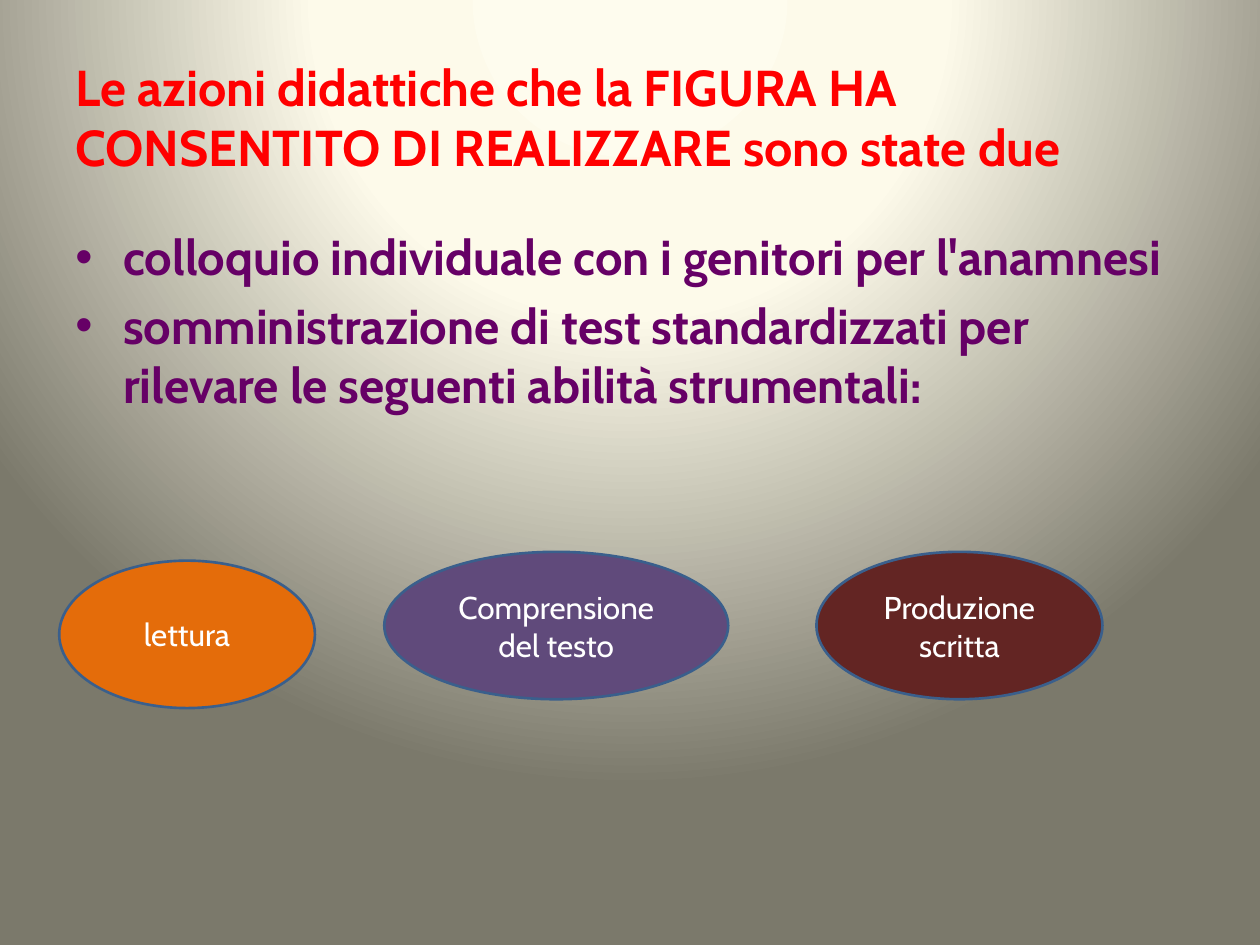
import dataclasses

import lxml.etree
import pptx
import pptx.dml.color
import pptx.enum.shapes
import pptx.enum.text
import pptx.oxml.ns
import pptx.util

Inches = pptx.util.Inches
Pt = pptx.util.Pt
qn = pptx.oxml.ns.qn
ALIGN = pptx.enum.text.PP_ALIGN
ANCHOR = pptx.enum.text.MSO_ANCHOR


@dataclasses.dataclass
class Skill:
    label: str
    left: float
    top: float
    width: float
    fill: str


SKILL_HEIGHT = 1.17
SKILLS = [
    Skill("lettura", 0.47, 4.45, 2.03, "E46C0A"),
    Skill("Comprensione del testo", 3.05, 4.38, 2.73, "604A7B"),
    Skill("Produzione scritta", 6.48, 4.38, 2.27, "632523"),
]
TITLE = "Le azioni didattiche che la FIGURA HA CONSENTITO DI REALIZZARE sono state due"
ACTIONS = [
    "colloquio individuale con i genitori per l'anamnesi",
    "somministrazione di test standardizzati per rilevare le seguenti abilità strumentali:",
]
BACKGROUND_STOPS = [(0, "FEFCEE"), (40, "FDFAEA"), (100, "7B796B")]
BACKGROUND_FOCUS = {"l": 50, "t": -80, "r": 50, "b": 180}

TITLE_FORMAT = {"size": Pt(28.8), "name": "Cabin", "bold": True}
ACTION_FORMAT = {"size": Pt(28), "name": "Cabin", "bold": True}
SKILL_FORMAT = {"size": Pt(18), "name": "Cabin", "bold": False}


def color(value: str) -> pptx.dml.color.RGBColor:
    return pptx.dml.color.RGBColor.from_string(value)


def paint_background(page) -> None:
    page.background.fill.gradient()
    gradient = page.element.find(".//" + qn("a:gradFill"))
    for child in list(gradient):
        gradient.remove(child)
    stops = lxml.etree.SubElement(gradient, qn("a:gsLst"))
    for position, value in BACKGROUND_STOPS:
        stop = lxml.etree.SubElement(stops, qn("a:gs"), pos=str(position * 1000))
        lxml.etree.SubElement(stop, qn("a:srgbClr"), val=value)
    circle = lxml.etree.SubElement(gradient, qn("a:path"), path="circle")
    focus = lxml.etree.SubElement(circle, qn("a:fillToRect"))
    for side, percent in BACKGROUND_FOCUS.items():
        focus.set(side, str(percent * 1000))


def write(para, text: str, formats: dict, value: str) -> None:
    span = para.add_run()
    span.text = text
    for name, setting in formats.items():
        setattr(span.font, name, setting)
    span.font.color.rgb = color(value)


def add_box(page, left: float, top: float, width: float, height: float, anchor):
    box = page.shapes.add_textbox(Inches(left), Inches(top), Inches(width), Inches(height))
    box.text_frame.word_wrap = True
    box.text_frame.vertical_anchor = anchor
    return box.text_frame


def add_bullet(para) -> None:
    para.space_before = Pt(5.6)
    properties = para._p.get_or_add_pPr()
    properties.set("marL", str(Inches(0.38)))
    properties.set("indent", str(Inches(-0.38)))
    lxml.etree.SubElement(properties, qn("a:buFont"), typeface="Arial")
    lxml.etree.SubElement(properties, qn("a:buChar"), char="•")


def add_skill(page, skill: Skill) -> None:
    oval = page.shapes.add_shape(
        pptx.enum.shapes.MSO_SHAPE.OVAL,
        Inches(skill.left), Inches(skill.top), Inches(skill.width), Inches(SKILL_HEIGHT),
    )
    oval.shadow.inherit = False
    oval.fill.solid()
    oval.fill.fore_color.rgb = color(skill.fill)
    oval.line.color.rgb = color("3A5F8C")
    oval.line.width = Pt(1.5)
    oval.text_frame.word_wrap = True
    oval.text_frame.vertical_anchor = ANCHOR.MIDDLE
    para = oval.text_frame.paragraphs[0]
    para.alignment = ALIGN.CENTER
    write(para, skill.label, SKILL_FORMAT, "FFFFFF")


def main() -> None:
    deck = pptx.Presentation()
    deck.slide_width, deck.slide_height = Inches(10), Inches(7.5)
    page = deck.slides.add_slide(deck.slide_layouts[6])
    paint_background(page)

    # Title
    title = add_box(page, 0.5, 0.3, 9, 1.25, ANCHOR.MIDDLE)
    write(title.paragraphs[0], TITLE, TITLE_FORMAT, "FF0000")

    # Bulleted actions
    body = add_box(page, 0.5, 1.75, 9, 4.95, ANCHOR.TOP)
    for index, action in enumerate(ACTIONS):
        para = body.add_paragraph() if index else body.paragraphs[0]
        add_bullet(para)
        write(para, action, ACTION_FORMAT, "660066")

    # Tested skills
    for skill in SKILLS:
        add_skill(page, skill)

    deck.save("out.pptx")


if __name__ == "__main__":
    main()
